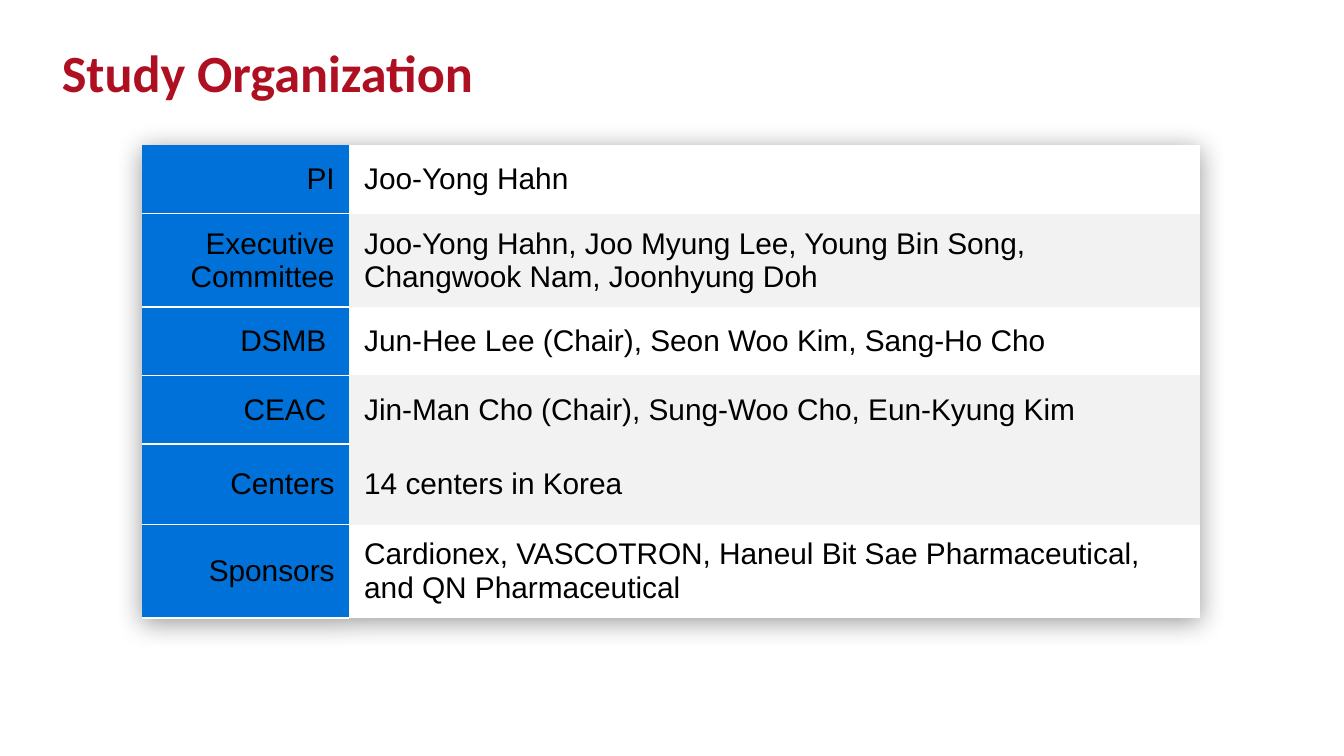
from lxml import etree
from pptx import Presentation
from pptx.dml.color import RGBColor
from pptx.enum import text
from pptx.oxml import ns
from pptx.util import Inches, Pt

COLORS = {"title": "AE1022", "label": "0071D8", "text": "000000",
          "white": "FFFFFF", "grey": "F2F2F2", "shadow": "000000"}


def add_xml(parent, tag, **attrs):
    return etree.SubElement(parent, ns.qn(tag), attrs)


def format_run(r, font, size, color, bold=False):
    r.font.name, r.font.size, r.font.bold = font, Pt(size), bold
    r.font.color.rgb = RGBColor.from_string(COLORS[color])


# Widescreen 16:9 slide
prs = Presentation()
prs.slide_width, prs.slide_height = Inches(10), Inches(10 * 9 / 16)
s = prs.slides.add_slide(prs.slide_layouts[5])

# Title
sp = s.shapes.title
sp.left, sp.top, sp.width, sp.height = map(Inches, (0.36, 0.36, 8.35, 0.47))
tf = sp.text_frame
tf.text = "Study Organization"
tf.vertical_anchor = text.MSO_ANCHOR.MIDDLE
p = tf.paragraphs[0]
p.alignment = text.PP_ALIGN.LEFT
p.line_spacing = Pt(25)
format_run(p.runs[0], "Calibri", 28, "title", bold=True)

# Table content: label, members, row height, fill of the members cell
rows = [
    ("PI", "Joo-Yong Hahn", 0.51, "white"),
    ("Executive Committee",
     "Joo-Yong Hahn, Joo Myung Lee, Young Bin Song, Changwook Nam, Joonhyung Doh",
     0.69, "grey"),
    ("DSMB ", "Jun-Hee Lee (Chair), Seon Woo Kim, Sang-Ho Cho", 0.51, "white"),
    ("CEAC ", "Jin-Man Cho (Chair), Sung-Woo Cho, Eun-Kyung Kim", 0.51, "grey"),
    ("Centers", "14 centers in Korea", 0.6, "grey"),
    ("Sponsors",
     "Cardionex, VASCOTRON, Haneul Bit Sae Pharmaceutical, and QN Pharmaceutical",
     0.69, "white"),
]
table = s.shapes.add_table(len(rows), 2, Inches(1.06), Inches(1.08), Inches(7.87),
                           Inches(sum(row[2] for row in rows))).table
table.first_row = table.horz_banding = False
table.columns[0].width, table.columns[1].width = Inches(1.54), Inches(6.33)

# Plain table style with a soft shadow
tbl_pr = table._tbl.tblPr
style = tbl_pr.find(ns.qn("a:tableStyleId"))
style.text = "{2D5ABB26-0587-4C30-8999-92F81FD0307C}"
effects = add_xml(tbl_pr, "a:effectLst")
style.addprevious(effects)
shadow = add_xml(effects, "a:outerShdw", blurRad=str(Inches(0.2)),
                 dist=str(Inches(0.03)), dir="5400000", algn="t", rotWithShape="0")
add_xml(add_xml(shadow, "a:srgbClr", val=COLORS["shadow"]), "a:alpha", val="40000")

# Cells
for i, (label, members, height, fill) in enumerate(rows):
    table.rows[i].height = Inches(height)
    for j, (words, color) in enumerate([(label, "label"), (members, fill)]):
        cell = table.cell(i, j)
        cell.text = words
        cell.vertical_anchor = text.MSO_ANCHOR.MIDDLE
        cell.margin_left = cell.margin_right = Inches(0.11)
        cell.margin_top = cell.margin_bottom = Inches(0.1)
        if j == 0:
            # White rules between the labels
            for tag in ["a:lnT", "a:lnB"] if i else ["a:lnB"]:
                line = add_xml(cell._tc.get_or_add_tcPr(), tag, w=str(Pt(1)))
                add_xml(add_xml(line, "a:solidFill"), "a:srgbClr", val=COLORS["white"])
        cell.fill.solid()
        cell.fill.fore_color.rgb = RGBColor.from_string(COLORS[color])
        p = cell.text_frame.paragraphs[0]
        p.alignment = text.PP_ALIGN.LEFT if j else text.PP_ALIGN.RIGHT
        format_run(p.runs[0], "Arial", 16, "text")

prs.save("out.pptx")
